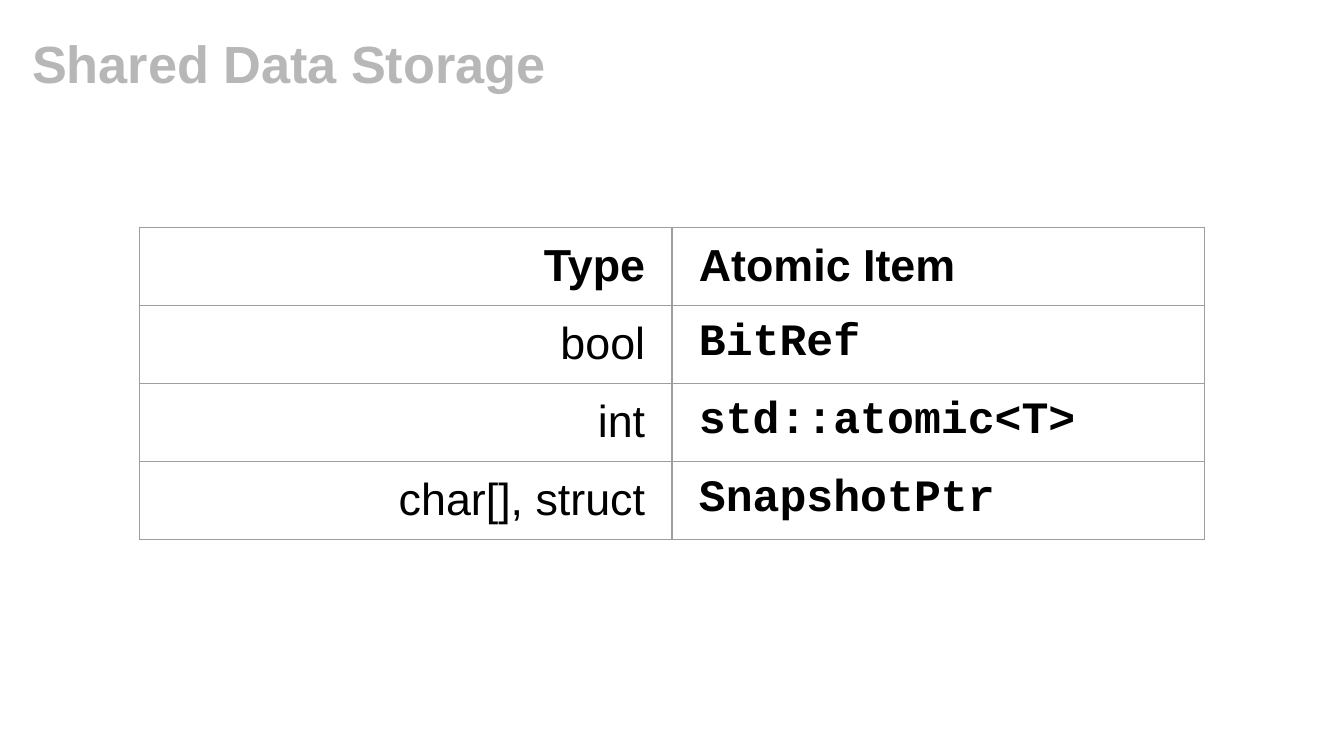
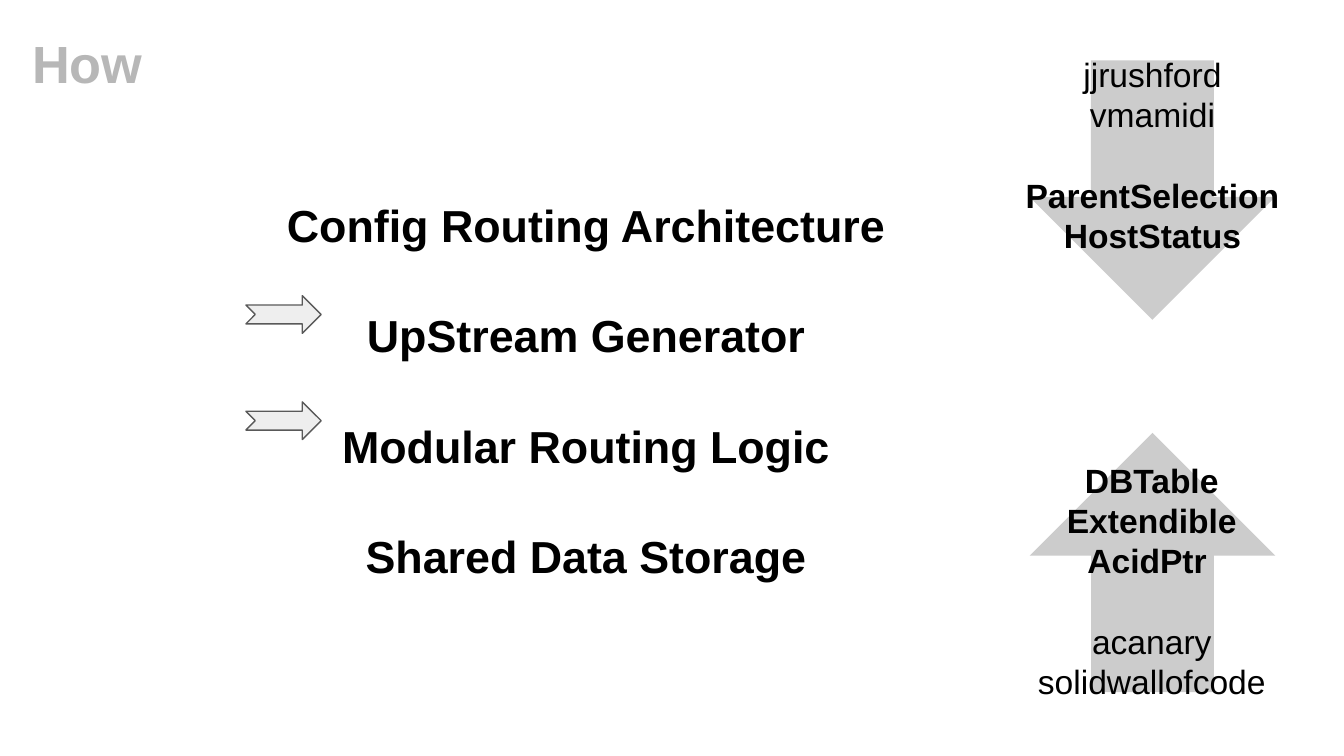
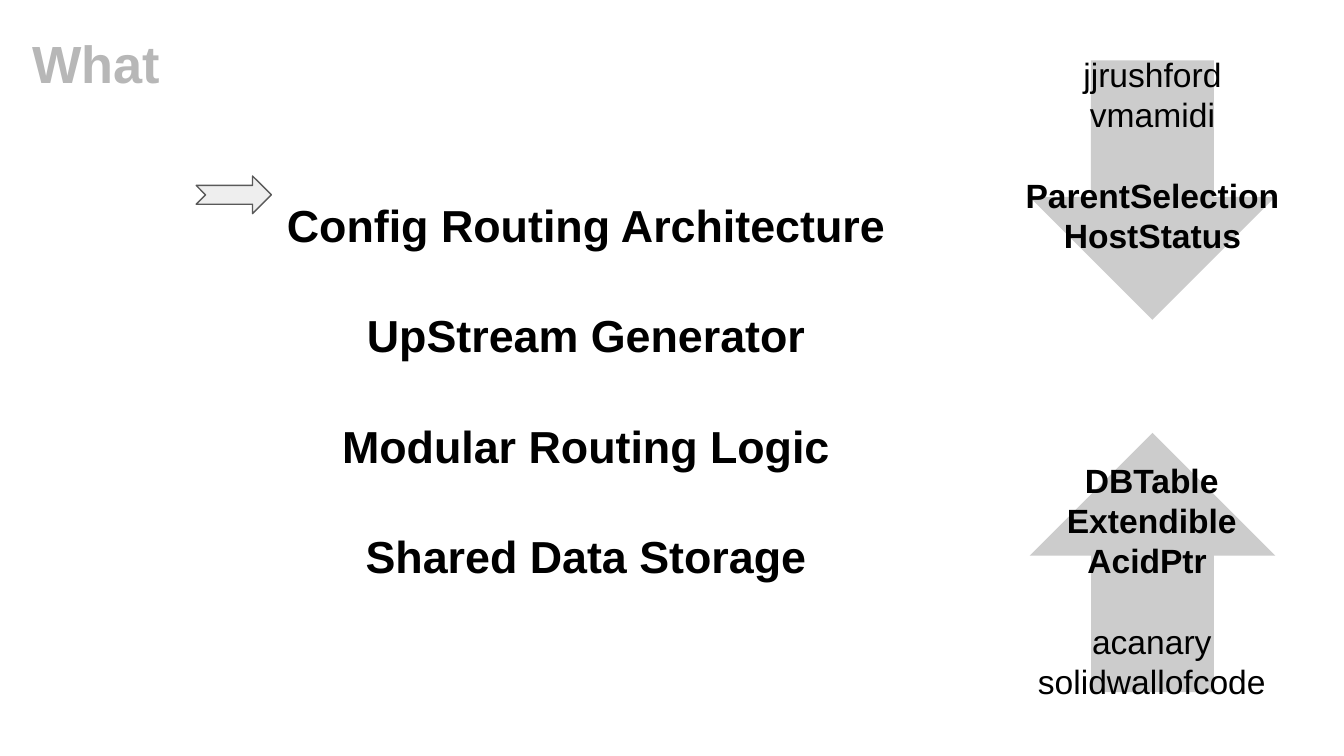
from lxml.etree import SubElement
from pptx import Presentation
from pptx.dml.color import RGBColor
from pptx.enum.shapes import MSO_SHAPE as Shape
from pptx.enum.text import MSO_ANCHOR as Anchor, PP_ALIGN as Align
from pptx.oxml.ns import qn
from pptx.util import Inches, Pt

TITLE_GRAY = "B7B7B7"
BLACK = "000000"
ARROW_GRAY = "CCCCCC"
MARKER_FILL = "EEEEEE"
MARKER_LINE = "595959"
BORDER_GRAY = "9E9E9E"
SANS = "Arial"
MONO = "Courier New"

TOPICS = ["Config Routing Architecture", "UpStream Generator",
          "Modular Routing Logic", "Shared Data Storage"]
STORAGE_ROWS = [("Type", "Atomic Item"), ("bool", "BitRef"),
                ("int", "std::atomic<T>"), ("char[], struct", "SnapshotPtr")]


def color(value):
    return RGBColor.from_string(value)


class Deck:
    def __init__(self):
        self.presentation = Presentation()
        self.presentation.slide_width = Inches(10)
        self.presentation.slide_height = Inches(10) * 9 // 16
        self.slide = None

    def add_slide(self):
        self.slide = self.presentation.slides.add_slide(self.presentation.slide_layouts[6])
        background = self.slide.background.fill
        background.solid()
        background.fore_color.rgb = color("FFFFFF")

    def add_run(self, paragraph, text, size, bold=False, font=SANS, ink=BLACK):
        run = paragraph.add_run()
        run.text = text
        run.font.size = Pt(size)
        run.font.bold = bold
        run.font.name = font
        run.font.color.rgb = color(ink)

    def add_text(self, box, lines, size, ink=BLACK, align=Align.CENTER,
                 anchor=Anchor.TOP, spacing=1.0, container=None):
        shapes = (container or self.slide).shapes
        frame = shapes.add_textbox(*map(Inches, box)).text_frame
        frame.word_wrap = True
        frame.vertical_anchor = anchor
        frame.margin_left = frame.margin_right = Inches(0.1)
        frame.margin_top = frame.margin_bottom = Inches(0.1)
        for index, (text, bold, gap) in enumerate(lines):
            paragraph = frame.paragraphs[0] if index == 0 else frame.add_paragraph()
            paragraph.alignment = align
            paragraph.line_spacing = spacing
            paragraph.space_before = Pt(gap)
            self.add_run(paragraph, text, size, bold, ink=ink)

    def add_title(self, text):
        self.add_text((0.14, 0.13, 9.32, 0.63), [(text, True, 0)], 28,
                      TITLE_GRAY, Align.LEFT)

    def add_arrow(self, kind, box, fill, line=None, rotation=0, container=None):
        shapes = (container or self.slide).shapes
        shape = shapes.add_shape(kind, *map(Inches, box))
        shape.shadow.inherit = False
        shape.rotation = rotation
        shape.fill.solid()
        shape.fill.fore_color.rgb = color(fill)
        if line:
            shape.line.color.rgb = color(line)
            shape.line.width = Pt(0.75)
        else:
            shape.line.fill.background()

    def add_marker(self, left, top):
        self.add_arrow(Shape.NOTCHED_RIGHT_ARROW, (left, top, 0.56, 0.28),
                       MARKER_FILL, MARKER_LINE)

    def add_labeled_arrow(self, top, rotation, label_box, label_anchor, blocks):
        group = self.slide.shapes.add_group_shape()
        self.add_arrow(Shape.DOWN_ARROW, (7.66, top, 1.83, 1.93), ARROW_GRAY,
                       rotation=rotation, container=group)
        lines = [(name, bold, 21.6 if block and not position else 0)
                 for block, (names, bold) in enumerate(blocks)
                 for position, name in enumerate(names)]
        self.add_text(label_box, lines, 18, anchor=label_anchor, container=group)

    def add_borders(self, cell):
        properties = cell._tc.get_or_add_tcPr()
        for position, side in enumerate(("lnL", "lnR", "lnT", "lnB")):
            border = SubElement(properties, qn(f"a:{side}"), w=str(Pt(0.75)))
            fill = SubElement(border, qn("a:solidFill"))
            SubElement(fill, qn("a:srgbClr"), val=BORDER_GRAY)
            properties.remove(border)
            properties.insert(position, border)

    def add_table(self, rows, left, top, column_width, row_height):
        columns = len(rows[0])
        table = self.slide.shapes.add_table(
            len(rows), columns, Inches(left), Inches(top),
            Inches(column_width * columns), Inches(row_height * len(rows))).table
        table.first_row = table.horz_banding = False
        for row, texts in enumerate(rows):
            for column, text in enumerate(texts):
                cell = table.cell(row, column)
                cell.fill.background()
                cell.margin_left = cell.margin_right = Inches(0.2)
                cell.margin_top = Inches(0.1)
                cell.margin_bottom = Inches(0.08)
                paragraph = cell.text_frame.paragraphs[0]
                paragraph.alignment = Align.LEFT if column else Align.RIGHT
                self.add_run(paragraph, text, 24, bold=row == 0 or column == 1,
                             font=MONO if row and column else SANS)
                self.add_borders(cell)

    def add_agenda(self, title, markers):
        self.add_slide()
        topics = [(topic, True, 16 if index else 0) for index, topic in enumerate(TOPICS)]
        self.add_text((1.46, 1.17, 5.8, 4.3), topics, 24, spacing=1.5)
        self.add_labeled_arrow(0.45, 0, (7.33, 0.3, 2.49, 1.06), Anchor.TOP, [
            (["jjrushford", "vmamidi"], False),
            (["ParentSelection", "HostStatus"], True)])
        self.add_labeled_arrow(3.22, 180, (7.58, 3.64, 1.98, 1.68), Anchor.BOTTOM, [
            (["DBTable", "Extendible", "AcidPtr "], True),
            (["acanary", "solidwallofcode"], False)])
        self.add_title(title)
        for left, top in markers:
            self.add_marker(left, top)


def main():
    deck = Deck()
    deck.add_slide()
    deck.add_title("Shared Data Storage")
    deck.add_table(STORAGE_ROWS, 1.04, 1.69, 3.96, 0.42)
    deck.add_agenda("How", [(1.83, 2.99), (1.83, 2.2)])
    deck.add_agenda("What", [(1.46, 1.31)])
    deck.presentation.save("out.pptx")


if __name__ == "__main__":
    main()
